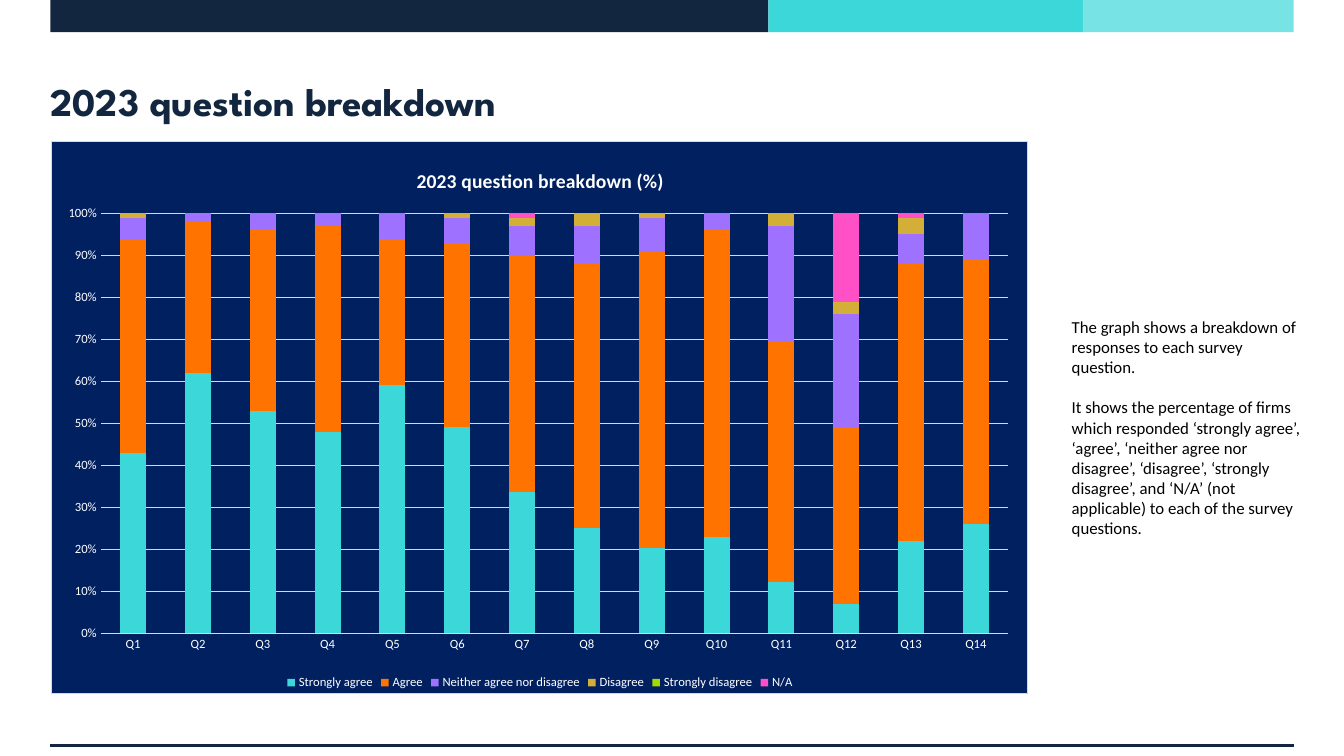
from dataclasses import dataclass

from lxml import etree
from pptx import Presentation
from pptx.chart.data import CategoryChartData
from pptx.dml.color import RGBColor
from pptx.enum.chart import XL_CHART_TYPE, XL_LEGEND_POSITION, XL_TICK_MARK
from pptx.enum.shapes import MSO_CONNECTOR, MSO_SHAPE
from pptx.enum.text import MSO_ANCHOR
from pptx.oxml import parse_xml
from pptx.oxml.ns import nsdecls, qn
from pptx.util import Pt

STACKED = XL_CHART_TYPE.COLUMN_STACKED_100
BOTTOM = XL_LEGEND_POSITION.BOTTOM
NO_TICK = XL_TICK_MARK.NONE
STRAIGHT = MSO_CONNECTOR.STRAIGHT
RECTANGLE = MSO_SHAPE.RECTANGLE
TOP, MIDDLE = MSO_ANCHOR.TOP, MSO_ANCHOR.MIDDLE

EMU_PER_PX = 9144  # 100 px to the inch


@dataclass(frozen=True)
class Theme:
    navy: str = "12273F"
    teal: str = "3CD7D9"
    pale_teal: str = "77E3E4"
    chart_blue: str = "002060"
    grid: str = "D9D9D9"
    white: str = "FFFFFF"
    black: str = "000000"
    orange: str = "FF7300"
    purple: str = "9E71FE"
    gold: str = "D4AF37"
    green: str = "A5D700"
    pink: str = "FF50C8"
    heading_font: str = "League Spartan"
    body_font: str = "Calibri"
    heading_size: int = 28
    chart_title_size: int = 14
    body_size: int = 12
    chart_size: int = 10
    label_size: int = 9
    line_gap: float = 14.4


THEME = Theme()

HEADING = "2023 question breakdown"
COMMENTARY = [
    "The graph shows a breakdown of responses to each survey question.",
    "It shows the percentage of firms which responded ‘strongly agree’, ‘agree’, "
    "‘neither agree nor disagree’, ‘disagree’, ‘strongly disagree’, and ‘N/A’ "
    "(not applicable) to each of the survey questions.",
]
QUESTIONS = [f"Q{number}" for number in range(1, 15)]
RESPONSES = [
    ("Strongly agree", THEME.teal, [43, 62, 53, 48, 59, 49, 34, 25, 20, 23, 12, 7, 22, 26]),
    ("Agree", THEME.orange, [51, 36, 43, 49, 35, 44, 57, 63, 70, 73, 57, 42, 66, 63]),
    ("Neither agree nor disagree", THEME.purple, [5, 2, 4, 3, 6, 6, 7, 9, 8, 4, 27, 27, 7, 11]),
    ("Disagree", THEME.gold, [1, 0, 0, 0, 0, 1, 2, 3, 1, 0, 3, 3, 4, 0]),
    ("Strongly disagree", THEME.green, [0] * len(QUESTIONS)),
    ("N/A", THEME.pink, [0, 0, None, 0, 0, 0, 1, 0, 0, 0, 0, 21, 1, 0]),
]


def px(*lengths):
    return [length * EMU_PER_PX for length in lengths]


def rgb(colour):
    return RGBColor.from_string(colour)


def apply(target, formats):
    for name, value in formats.items():
        setattr(target, name, value)


def style_font(font, size, colour, family=THEME.body_font, bold=False):
    apply(font, {"size": Pt(size), "name": family, "bold": bold})
    font.color.rgb = rgb(colour)


def style_line(line, colour, width):
    line.color.rgb = rgb(colour)
    line.width = Pt(width)


def add_band(slide, left, width, height, colour):
    band = slide.shapes.add_shape(RECTANGLE, *px(left, 0, width, height))
    band.shadow.inherit = False
    band.fill.solid()
    band.fill.fore_color.rgb = rgb(colour)
    band.line.fill.background()


def add_rule(slide, left, right, y):
    rule = slide.shapes.add_connector(STRAIGHT, *px(left, y, right, y))
    style_line(rule.line, THEME.navy, 2.25)
    etree.SubElement(rule._element.spPr, qn("a:effectLst"))


def add_text(slide, box, paragraphs, anchor, **font_format):
    frame = slide.shapes.add_textbox(*px(*box)).text_frame
    apply(frame, {"word_wrap": True, "vertical_anchor": anchor, "margin_left": 0,
                  "margin_right": 0, "margin_top": 0, "margin_bottom": 0})
    for index, wording in enumerate(paragraphs):
        paragraph = frame.add_paragraph() if index else frame.paragraphs[0]
        if index:
            paragraph.space_before = Pt(THEME.line_gap)
        run = paragraph.add_run()
        run.text = wording
        style_font(run.font, **font_format)


def manual_layout(target="", **fractions):
    inner = f'<c:layoutTarget val="{target}"/>' if target else ""
    modes = "".join(f'<c:{key}Mode val="edge"/>' for key in "xy")
    sizes = "".join(f'<c:{key} val="{value}"/>' for key, value in fractions.items())
    return parse_xml(f'<c:layout {nsdecls("c")}><c:manualLayout>{inner}{modes}{sizes}'
                     "</c:manualLayout></c:layout>")


def set_layout(parent, layout, after=None):
    for old in parent.findall(qn("c:layout")):
        parent.remove(old)
    if after is None:
        parent.insert(0, layout)
    else:
        parent.find(qn(after)).addnext(layout)


def fill_background(chart):
    panel = (f'<c:spPr {nsdecls("c", "a")}><a:solidFill><a:srgbClr val="{THEME.chart_blue}"/>'
             "</a:solidFill>{}</c:spPr>")
    border = (f'<a:ln w="9525"><a:solidFill><a:srgbClr val="{THEME.grid}"/>'
              "</a:solidFill></a:ln>")
    chart_space = chart._chartSpace
    chart_space.chart.plotArea.append(parse_xml(panel.format("")))
    chart_space.chart.addnext(parse_xml(panel.format(border)))


def style_axes(chart):
    for axis in (chart.category_axis, chart.value_axis):
        apply(axis, {"major_tick_mark": NO_TICK, "minor_tick_mark": NO_TICK})
        style_font(axis.tick_labels.font, THEME.label_size, THEME.white)
    style_line(chart.category_axis.format.line, THEME.grid, 0.75)
    percentages = chart.value_axis
    percentages.format.line.fill.background()
    style_line(percentages.major_gridlines.format.line, THEME.grid, 0.75)
    apply(percentages, {"minimum_scale": 0, "maximum_scale": 1, "major_unit": 0.1})
    apply(percentages.tick_labels, {"number_format": "0%", "number_format_is_linked": False})


def add_response_chart(slide, box, title):
    survey = CategoryChartData()
    survey.categories = QUESTIONS
    for name, _, shares in RESPONSES:
        survey.add_series(name, shares)
    chart = slide.shapes.add_chart(STACKED, *px(*box), survey).chart
    style_font(chart.font, THEME.chart_size, THEME.black)

    # Title and legend
    chart.chart_title.text_frame.text = title
    heading = chart.chart_title.text_frame.paragraphs[0].runs[0]
    style_font(heading.font, THEME.chart_title_size, THEME.white, bold=True)
    chart.chart_title.include_in_layout = False
    set_layout(chart._chartSpace.chart.find(qn("c:title")),
               manual_layout(x=0.37, y=0.04), after="c:tx")
    chart.has_legend = True
    apply(chart.legend, {"position": BOTTOM, "include_in_layout": False})
    style_font(chart.legend.font, THEME.label_size, THEME.white)

    # Columns
    plot = chart.plots[0]
    apply(plot, {"gap_width": 150, "overlap": 100, "vary_by_categories": False})
    for series, (_, colour, _) in zip(plot.series, RESPONSES):
        series.format.fill.solid()
        series.format.fill.fore_color.rgb = rgb(colour)
    style_axes(chart)
    set_layout(chart._chartSpace.chart.plotArea,
               manual_layout("inner", x=0.05, y=0.13, w=0.93, h=0.76))
    fill_background(chart)


def main():
    deck = Presentation()
    deck.slide_width, deck.slide_height = px(1333, 750)
    slide = deck.slides.add_slide(deck.slide_layouts[6])

    # Header bands and footer rule
    left = 50
    for width, colour in ((712, THEME.navy), (312, THEME.teal), (209, THEME.pale_teal)):
        add_band(slide, left, width, 32, colour)
        left += width
    add_rule(slide, 50, 1283, 740)

    # Heading, chart and commentary
    add_text(slide, (50, 50, 1233, 100), [HEADING], MIDDLE, size=THEME.heading_size,
             colour=THEME.navy, family=THEME.heading_font, bold=True)
    add_response_chart(slide, (51, 140, 969, 549), f"{HEADING} (%)")
    add_text(slide, (1063, 314, 234, 184), COMMENTARY, TOP,
             size=THEME.body_size, colour=THEME.black)

    deck.save("out.pptx")


if __name__ == "__main__":
    main()
